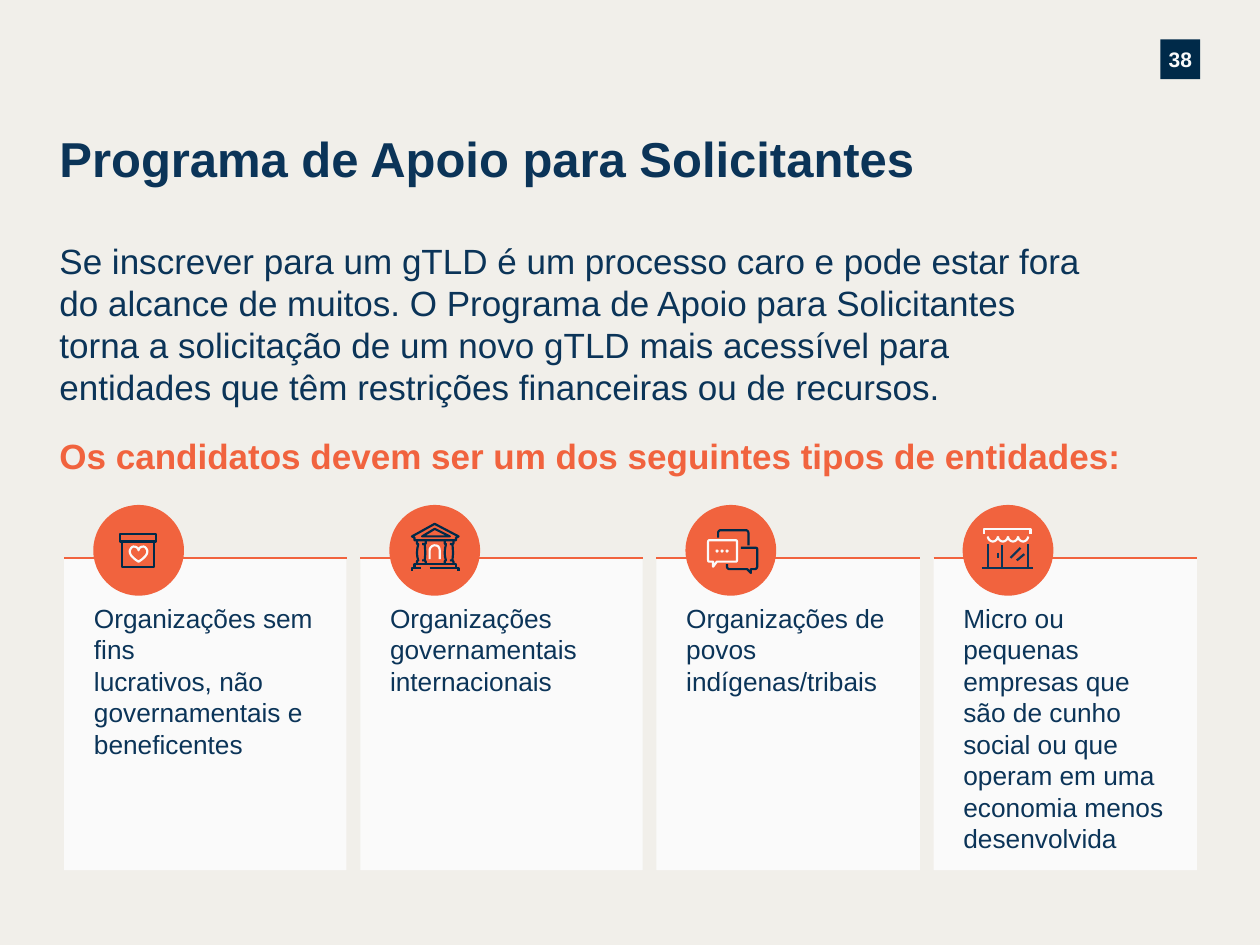
from lxml import etree
from pptx import Presentation
from pptx.dml.color import RGBColor
from pptx.enum.shapes import MSO_CONNECTOR, MSO_SHAPE
from pptx.enum.text import MSO_ANCHOR, PP_ALIGN
from pptx.oxml.ns import qn
from pptx.util import Pt

RECTANGLE, OVAL = MSO_SHAPE.RECTANGLE, MSO_SHAPE.OVAL
STRAIGHT = MSO_CONNECTOR.STRAIGHT
TOP, MIDDLE = MSO_ANCHOR.TOP, MSO_ANCHOR.MIDDLE
LEFT, CENTER = PP_ALIGN.LEFT, PP_ALIGN.CENTER

CREAM = RGBColor(0xF1, 0xEF, 0xEA)
WHITE = RGBColor(0xFA, 0xFA, 0xFA)
NAVY = RGBColor(0x0B, 0x34, 0x58)
DARK = RGBColor(0x00, 0x2A, 0x49)
ORANGE = RGBColor(0xF1, 0x63, 0x3E)

FONT = "Arial"
STROKE = 1.25
CIRCLE = 51.84
ICON_GRID = 72
CURVE_STEPS = 8
CARD_GAP = 7.92


def write(frame, texts, size, color, bold=False, insets=(0, 0, 0, 0),
          anchor=TOP, align=LEFT, spacing=None):
    """Fill a text frame with one formatted run per paragraph."""
    frame.word_wrap = True
    frame.vertical_anchor = anchor
    (frame.margin_left, frame.margin_top,
     frame.margin_right, frame.margin_bottom) = map(Pt, insets)
    for index, text in enumerate(texts):
        paragraph = frame.add_paragraph() if index else frame.paragraphs[0]
        paragraph.alignment = align
        if spacing:
            paragraph.line_spacing = Pt(spacing)
        run = paragraph.add_run()
        run.text = text
        run.font.name, run.font.size, run.font.bold = FONT, Pt(size), bold
        run.font.color.rgb = color


def add_block(shapes, kind, box, color):
    """Add a flat filled shape without an outline."""
    shape = shapes.add_shape(kind, *map(Pt, box))
    shape.shadow.inherit = False
    shape.fill.solid()
    shape.fill.fore_color.rgb = color
    shape.line.fill.background()
    return shape


def add_line(shapes, start, end, color):
    """Add a straight connector without a shadow."""
    line = shapes.add_connector(STRAIGHT, *map(Pt, (*start, *end)))
    line.line.color.rgb, line.line.width = color, Pt(STROKE)
    etree.SubElement(line._element.spPr, qn("a:effectLst"))


def flatten(path):
    """Turn points and six-number cubic curves into a list of points."""
    points = [path[0]]
    for step in path[1:]:
        if len(step) == 2:
            points.append(step)
            continue
        controls = (points[-1], step[:2], step[2:4], step[4:])
        for index in range(1, CURVE_STEPS + 1):
            t = index / CURVE_STEPS
            weights = ((1 - t) ** 3, 3 * t * (1 - t) ** 2, 3 * t * t * (1 - t), t ** 3)
            points.append(tuple(sum(w * c[axis] for w, c in zip(weights, controls))
                                for axis in (0, 1)))
    return points


def add_icon(shapes, left, top, size, strokes):
    """Draw an icon's strokes on a square grid in the given box."""
    group = shapes.add_group_shape()
    unit = size / ICON_GRID
    for color, path, closed in strokes:
        points = [(left + x * unit, top + y * unit) for x, y in flatten(path)]
        if len(points) == 2:
            add_line(group.shapes, *points, color)
            continue
        points = [(Pt(x), Pt(y)) for x, y in points]
        builder = group.shapes.build_freeform(*points[0])
        builder.add_line_segments(points[1:], close=closed)
        outline = builder.convert_to_shape()
        outline.shadow.inherit = False
        outline.fill.background()
        outline.line.color.rgb, outline.line.width = color, Pt(STROKE)


def donation_strokes():
    """Return the strokes of a box with a heart."""
    heart = [(36, 45), (36, 45, 43, 41, 43, 37), (43, 35, 41, 33, 40, 33),
             (37, 33, 36, 35, 36, 36), (36, 35, 35, 33, 32, 33),
             (31, 33, 29, 35, 29, 37), (29, 41, 36, 45, 36, 45)]
    return [(DARK, [(21, 23), (50, 23), (50, 29), (21, 29)], True),
            (DARK, [(23, 29), (48, 29), (48, 49), (23, 49)], True),
            (WHITE, heart, True)]


def institution_strokes():
    """Return the strokes of a building with columns."""
    strokes = [
        (DARK, [(32, 50), (55, 50), (55, 52)], False),
        (DARK, [(18, 52), (18, 50), (25, 50)], False),
        (DARK, [(20, 50), (20, 47), (53, 47), (53, 50)], False),
        (WHITE, [(32, 43), (32, 36), (32, 34, 34, 32, 36, 32),
                 (39, 32, 40, 34, 40, 36), (40, 43)], False),
        (DARK, [(36, 19), (26, 25), (48, 25)], True),
        (DARK, [(53, 28), (20, 28), (20, 26), (18, 25), (36, 15), (55, 25), (53, 26)], True)]
    column = [
        [(28, 31), (28, 31, 28.5, 35, 28.5, 38), (28.5, 41, 28, 44, 28, 44)],
        [(26, 31), (28, 31), (28, 31, 29, 31, 29, 30), (29, 28)],
        [(26, 44), (28, 44), (28, 44, 29, 45, 29, 45), (29, 47)],
        [(22, 47), (22, 45), (22, 45, 22, 44, 23, 44), (23, 44, 22, 41, 22, 38),
         (22, 35, 23, 31, 23, 31), (22, 31, 22, 31, 22, 30), (22, 28)]]
    for shift in (0, 22):
        for path in column:
            moved = [tuple(value + shift * (index % 2 == 0)
                           for index, value in enumerate(step)) for step in path]
            strokes.append((DARK, moved, False))
    return strokes


def dialogue_strokes():
    """Return the strokes of overlapping speech bubbles."""
    front = [(40, 28), (19, 28), (18, 28, 18, 29, 18, 30), (18, 43),
             (18, 44, 18, 45, 19, 45), (22, 45), (22, 49), (25, 45), (40, 45),
             (41, 45, 41, 44, 41, 43), (41, 30), (41, 29, 41, 28, 40, 28)]
    right = [(33, 47), (33, 49), (33, 50, 34, 51, 35, 51), (49, 51), (52, 54),
             (52, 51), (55, 51), (56, 51, 57, 50, 57, 49), (57, 35),
             (57, 34, 56, 34, 55, 34), (44, 34)]
    back = [(26, 26), (26, 22), (26, 21, 27, 20, 28, 20), (48, 20),
            (49, 20, 50, 21, 50, 22), (50, 32)]
    dots = [(WHITE, [(x, 36), (x + 0.5, 36.5), (x, 37), (x - 0.5, 36.5)], True)
            for x in (25, 29, 33)]
    return [(WHITE, front, True), (DARK, right, False), (DARK, back, False), *dots]


def shop_strokes():
    """Return the strokes of a shop with an awning."""
    scallops = [(WHITE, [(x + 8, 25), (x + 8, 27, x + 6, 29, x + 4, 29),
                         (x + 2, 29, x, 27, x, 25)], False) for x in range(20, 52, 8)]
    lines = [[(20, 31), (20, 50)], [(31, 32), (31, 50)], [(52, 31), (52, 50)],
             [(28, 38), (28, 42)], [(15, 50), (56, 50)],
             [(46, 34), (38, 42)], [(49, 39), (43, 44)]]
    awning = [(17, 23), (17, 19), (54, 19), (54, 23)]
    return [(WHITE, awning, False), *scallops, *((NAVY, line, False) for line in lines)]


def add_card(shapes, left, top, width, height, texts, strokes):
    """Add one entity card with its top rule, round badge and icon."""
    card = add_block(shapes, RECTANGLE, (left, top, width, height), WHITE)
    write(card.text_frame, texts, 15, NAVY, insets=(17, 25.2, 11.5, 14.4), spacing=18)
    add_line(shapes, (left, top), (left + width, top), ORANGE)
    badge = (left + 16.56, top - 30.24)
    add_block(shapes, OVAL, (*badge, CIRCLE, CIRCLE), ORANGE)
    add_icon(shapes, *badge, CIRCLE, strokes)


def add_cards(shapes, left, top, height):
    """Lay the entity cards out in a row with equal gaps."""
    cards = [
        (161.28, ["Organizações sem fins",
                  "lucrativos, não governamentais e beneficentes"], donation_strokes()),
        (161.28, ["Organizações governamentais internacionais"], institution_strokes()),
        (150.48, ["Organizações de povos indígenas/tribais"], dialogue_strokes()),
        (150.48, ["Micro ou pequenas empresas que são de cunho social ou que "
                  "operam em uma economia menos desenvolvida"], shop_strokes())]
    for width, texts, strokes in cards:
        add_card(shapes, left, top, width, height, texts, strokes)
        left += width + CARD_GAP


def add_title(shapes, left, top, width, height):
    """Place and format the title placeholder."""
    title = shapes.title
    title.left, title.top, title.width, title.height = map(Pt, (left, top, width, height))
    write(title.text_frame, ["Programa de Apoio para Solicitantes"], 28, NAVY,
          bold=True, anchor=MIDDLE)


def add_text(shapes, box, text, color, bold=False):
    """Add a block of running text."""
    frame = shapes.add_textbox(*map(Pt, box)).text_frame
    write(frame, [text], 20, color, bold=bold, spacing=24)


def add_page_number(shapes, left, top, size):
    """Add the square page number badge."""
    badge = add_block(shapes, RECTANGLE, (left, top, size, size), DARK)
    write(badge.text_frame, ["38"], 12, WHITE, bold=True, anchor=MIDDLE, align=CENTER)


def main():
    """Build and save the slide."""
    presentation = Presentation()
    presentation.slide_width, presentation.slide_height = Pt(720), Pt(540)
    slide = presentation.slides.add_slide(presentation.slide_layouts[5])
    slide.background.fill.solid()
    slide.background.fill.fore_color.rgb = CREAM
    shapes = slide.shapes
    add_page_number(shapes, 663.1, 22.5, 22.7)
    add_title(shapes, 34, 70.5, 516, 39.6)
    add_text(shapes, (34, 137, 587, 107),
             "Se inscrever para um gTLD é um processo caro e pode estar fora do alcance de "
             "muitos. O Programa de Apoio para Solicitantes torna a solicitação de um novo "
             "gTLD mais acessível para entidades que têm restrições financeiras ou de "
             "recursos.", NAVY)
    add_text(shapes, (34, 248.5, 623, 31),
             "Os candidatos devem ser um dos seguintes tipos de entidades:", ORANGE, bold=True)
    add_cards(shapes, 36.72, 318.8, 178.4)
    presentation.save("out.pptx")


if __name__ == "__main__":
    main()
